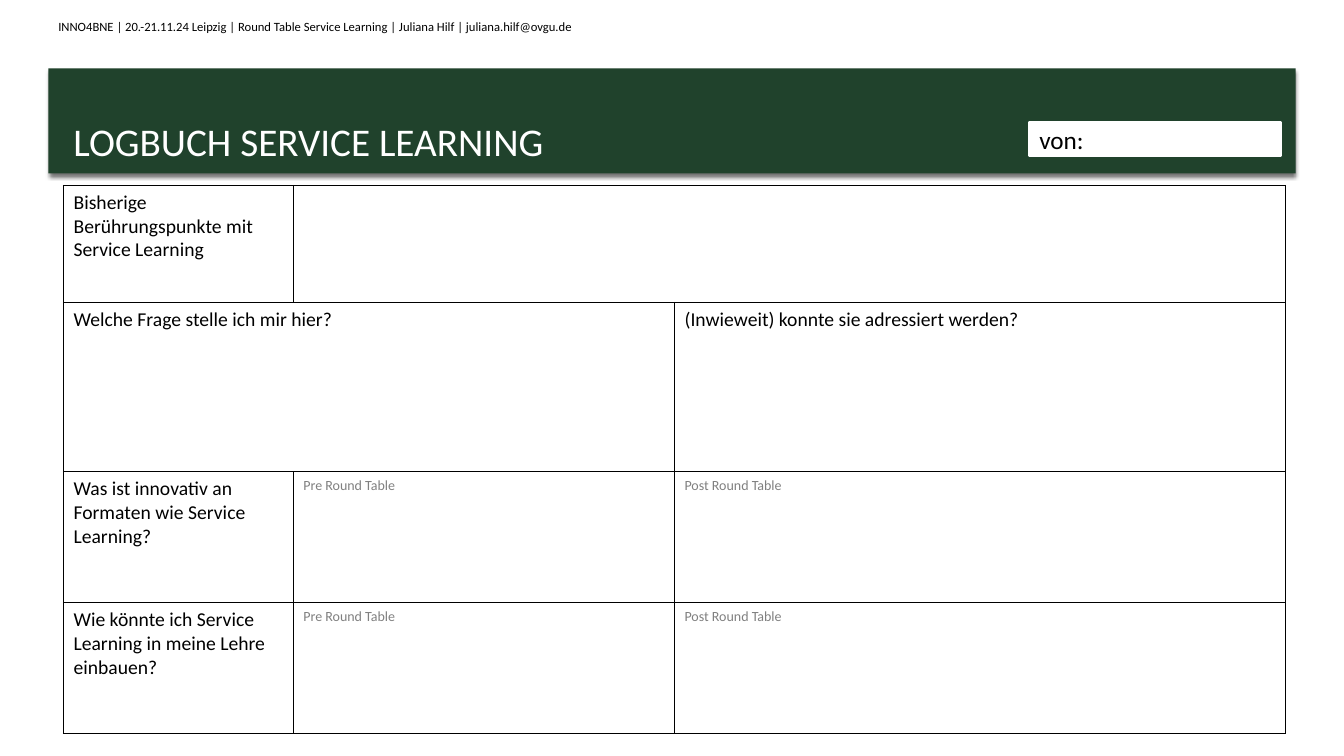
"""Build the service learning logbook slide."""
from dataclasses import dataclass

from lxml import etree
from pptx import Presentation
from pptx import util as u
from pptx.dml.color import RGBColor
from pptx.enum import shapes, text
from pptx.oxml.ns import qn

PX = 9144
FONT = "Calibri"
BLACK, WHITE, GREEN, GREY = "000000", "FFFFFF", "20422C", "808080"
COLUMNS = (228, 378, 606)
ROWS = (116, 168, 130, 130)


@dataclass(frozen=True)
class Box:
    """A rectangle in px."""

    left: int
    top: int
    width: int
    height: int

    def emu(self) -> tuple[int, ...]:
        """Return left, top, width and height in EMU."""
        return tuple(u.Emu(n * PX) for n in (self.left, self.top, self.width, self.height))


@dataclass(frozen=True)
class Label:
    """A free text line."""

    box: Box
    words: str
    size: int
    colour: str
    anchor: text.MSO_ANCHOR


@dataclass(frozen=True)
class Entry:
    """A table cell, possibly spanning several columns."""

    row: int
    column: int
    words: str
    span: int = 1
    size: int = 14
    colour: str = BLACK


LABELS = (
    Label(Box(48, 14, 582, 25),
          "INNO4BNE | 20.-21.11.24 Leipzig | Round Table Service Learning"
          " | Juliana Hilf | juliana.hilf@ovgu.de",
          9, BLACK, text.MSO_ANCHOR.TOP),
    Label(Box(63, 57, 1206, 111), "LOGBUCH SERVICE LEARNING", 28, WHITE,
          text.MSO_ANCHOR.BOTTOM),
)

ENTRIES = (
    Entry(0, 0, "Bisherige Berührungspunkte mit Service Learning"),
    Entry(0, 1, "", span=2),
    Entry(1, 0, "Welche Frage stelle ich mir hier?", span=2),
    Entry(1, 2, "(Inwieweit) konnte sie adressiert werden?"),
    Entry(2, 0, "Was ist innovativ an Formaten wie Service Learning?"),
    Entry(3, 0, "Wie könnte ich Service Learning in meine Lehre einbauen?"),
    *(Entry(row, column, f"{phase} Round Table", size=10, colour=GREY)
      for row in (2, 3) for column, phase in ((1, "Pre"), (2, "Post"))),
)


def rgb(colour: str) -> RGBColor:
    """Turn a hex string into a colour."""
    return RGBColor.from_string(colour)


def write(frame, words: str, size: int, colour: str) -> None:
    """Put one formatted line of text in a text frame."""
    frame.text = words
    frame.word_wrap = True
    paragraph = frame.paragraphs[0]
    paragraph.alignment = text.PP_ALIGN.LEFT
    for run in paragraph.runs:
        run.font.name = FONT
        run.font.size = u.Pt(size)
        run.font.color.rgb = rgb(colour)


def add_label(slide, label: Label) -> None:
    """Draw a text box."""
    frame = slide.shapes.add_textbox(*label.box.emu()).text_frame
    write(frame, label.words, label.size, label.colour)
    frame.vertical_anchor = label.anchor


def add_rectangle(slide, box: Box, colour: str):
    """Draw a plain filled rectangle."""
    shape = slide.shapes.add_shape(shapes.MSO_SHAPE.RECTANGLE, *box.emu())
    shape.shadow.inherit = False
    shape.fill.solid()
    shape.fill.fore_color.rgb = rgb(colour)
    shape.line.fill.background()
    return shape


def add_colour(parent, colour: str):
    """Append a hex colour element."""
    return etree.SubElement(parent, qn("a:srgbClr"), val=colour)


def add_shadow(shape) -> None:
    """Give a shape a soft shadow straight below it."""
    effects = shape._element.spPr.find(qn("a:effectLst"))
    shadow = etree.SubElement(
        effects, qn("a:outerShdw"), blurRad=str(u.Pt(3)), dist=str(u.Pt(2)),
        dir="5400000", algn="ctr", rotWithShape="0")
    etree.SubElement(add_colour(shadow, BLACK), qn("a:alpha"), val="55000")


def add_borders(cell) -> None:
    """Draw thin black lines round a cell."""
    properties = cell._tc.get_or_add_tcPr()
    for position, side in enumerate(("lnL", "lnR", "lnT", "lnB")):
        line = etree.Element(qn(f"a:{side}"), w=str(u.Pt(1)))
        add_colour(etree.SubElement(line, qn("a:solidFill")), BLACK)
        properties.insert(position, line)


def add_logbook(slide) -> None:
    """Draw the table of questions."""
    box = Box(63, 184, sum(COLUMNS), sum(ROWS))
    table = slide.shapes.add_table(len(ROWS), len(COLUMNS), *box.emu()).table
    table.first_row = table.horz_banding = False
    for column, width in zip(table.columns, COLUMNS):
        column.width = u.Emu(width * PX)
    for row, height in zip(table.rows, ROWS):
        row.height = u.Emu(height * PX)
    for cell in table.iter_cells():
        cell.fill.background()
        add_borders(cell)
    for entry in ENTRIES:
        cell = table.cell(entry.row, entry.column)
        if entry.span > 1:
            cell.merge(table.cell(entry.row, entry.column + entry.span - 1))
        write(cell.text_frame, entry.words, entry.size, entry.colour)


def main() -> None:
    """Build and save the slide."""
    presentation = Presentation()
    presentation.slide_width = u.Emu(1333 * PX)
    presentation.slide_height = u.Emu(750 * PX)
    slide = presentation.slides.add_slide(presentation.slide_layouts[6])
    add_shadow(add_rectangle(slide, Box(48, 68, 1237, 104), GREEN))
    for label in LABELS:
        add_label(slide, label)
    author = add_rectangle(slide, Box(1021, 121, 249, 34), WHITE)
    author.line.color.rgb = rgb(WHITE)
    author.line.width = u.Pt(1.75)
    write(author.text_frame, "von:", 18, BLACK)
    author.text_frame.vertical_anchor = text.MSO_ANCHOR.MIDDLE
    add_logbook(slide)
    presentation.save("out.pptx")


if __name__ == "__main__":
    main()
